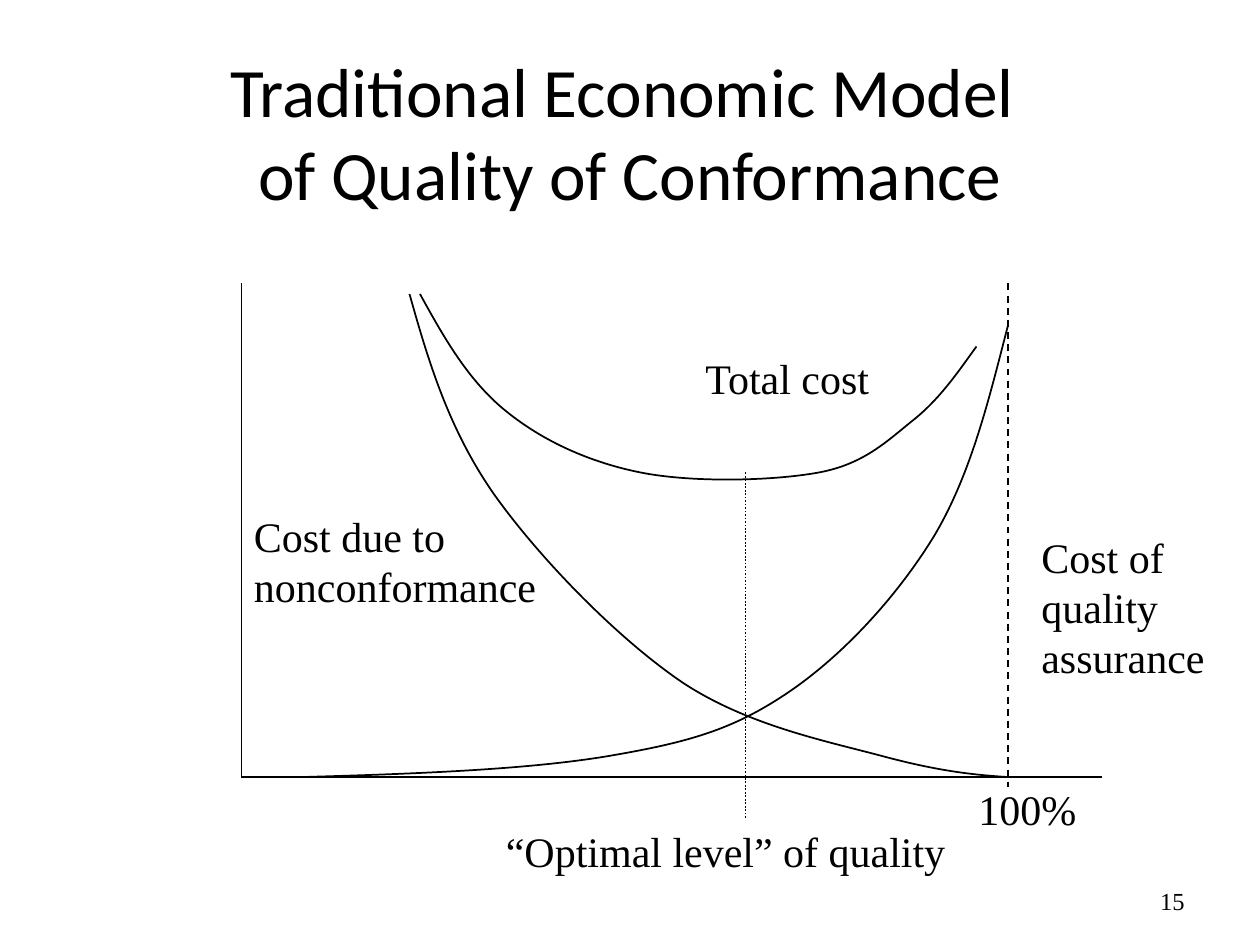
"""Build a slide on the traditional economic model of quality of conformance."""
from lxml.etree import SubElement
from pptx import Presentation
from pptx.dml.color import RGBColor
from pptx.enum.dml import MSO_LINE
from pptx.enum.shapes import MSO_CONNECTOR
from pptx.enum.text import MSO_ANCHOR, PP_ALIGN
from pptx.oxml.ns import qn
from pptx.util import Cm, Pt

GRID_CM = 25.4 / 120
INK = "000000"
SERIF = "Times New Roman"

TITLE = ("Traditional Economic Model \vof Quality of Conformance", (9, 5, 102, 15))
PAGE_NUMBER = ("15", (86, 83.4, 28, 4.8))
LABELS = [
    ("Total cost", (66, 33, 24, 6)),
    ("Cost due to nonconformance", (23, 48, 32, 10.8)),
    ("Cost of quality assurance", (98, 50, 22, 15.6)),
    ("“Optimal level” of quality", (47, 78, 47, 6)),
    ("100%", (92, 74, 14, 6)),
]

COST_AXIS = ((23, 27), (23, 74), None)
QUALITY_AXIS = ((23, 74), (105, 74), None)
OPTIMAL_LEVEL = ((71, 45), (71, 78), MSO_LINE.ROUND_DOT)
FULL_QUALITY = ((96, 27), (96, 75), MSO_LINE.DASH)

ASSURANCE_COST = [
    (29, 74),
    (39.7, 73.7), (50.3, 73.3), (58, 72),
    (65.6, 70.7), (69.8, 69.5), (75, 66),
    (80.2, 62.5), (85.4, 56.9), (89, 51),
    (92.5, 45.1), (94.2, 38), (96, 31),
]
NONCONFORMANCE_COST = [
    (39, 28),
    (40.8, 34.4), (42.7, 40.8), (47, 47),
    (51.4, 53.2), (58.8, 60.8), (65, 65),
    (71.2, 69.1), (78.8, 70.6), (84, 72),
    (89.2, 73.4), (92.6, 73.8), (96, 74),
]
TOTAL_COST = [
    (40, 28),
    (42.2, 32), (44.5, 36.1), (48, 39),
    (51.5, 41.9), (56, 44), (61, 45),
    (66, 46), (73.7, 45.8), (78, 45),
    (82.3, 44.2), (84.5, 42), (87, 40),
    (89.5, 38), (91.2, 35.5), (93, 33),
]


def color(hex_string):
    return RGBColor.from_string(hex_string)


def grid(*units):
    return [Cm(unit * GRID_CM) for unit in units]


def style_line(line):
    line.color.rgb = color(INK)
    line.width = Pt(1)


def add_text(slide, text, place, size=24, font=SERIF,
             align=PP_ALIGN.LEFT, anchor=MSO_ANCHOR.TOP):
    frame = slide.shapes.add_textbox(*grid(*place)).text_frame
    frame.word_wrap = True
    frame.vertical_anchor = anchor
    frame.text = text
    paragraph = frame.paragraphs[0]
    paragraph.alignment = align
    for run in paragraph.runs:
        run.font.name = font
        run.font.size = Pt(size)
        run.font.color.rgb = color(INK)


def add_line(slide, start, end, dash):
    connector = slide.shapes.add_connector(MSO_CONNECTOR.STRAIGHT, *grid(*start, *end))
    style_line(connector.line)
    if dash is not None:
        connector.line.dash_style = dash
    SubElement(connector.element.spPr, qn("a:effectLst"))


def add_curve(slide, points):
    start, *rest = [grid(*point) for point in points]
    builder = slide.shapes.build_freeform(*start)
    builder.add_line_segments(rest, close=False)
    curve = builder.convert_to_shape()
    curve.shadow.inherit = False
    curve.fill.background()
    style_line(curve.line)
    segments = list(curve.element.iter(qn("a:lnTo")))
    outline = segments[0].getparent()
    for first in range(0, len(segments), 3):
        bezier = SubElement(outline, qn("a:cubicBezTo"))
        for segment in segments[first:first + 3]:
            bezier.append(segment[0])
            outline.remove(segment)


def main():
    deck = Presentation()
    deck.slide_width, deck.slide_height = Cm(25.4), Cm(19.05)
    slide = deck.slides.add_slide(deck.slide_layouts[6])

    add_text(slide, *TITLE, size=39.6, font="Calibri",
             align=PP_ALIGN.CENTER, anchor=MSO_ANCHOR.MIDDLE)
    add_text(slide, *PAGE_NUMBER, size=14,
             align=PP_ALIGN.RIGHT, anchor=MSO_ANCHOR.MIDDLE)
    for line in (COST_AXIS, QUALITY_AXIS, OPTIMAL_LEVEL, FULL_QUALITY):
        add_line(slide, *line)
    for points in (ASSURANCE_COST, NONCONFORMANCE_COST, TOTAL_COST):
        add_curve(slide, points)
    for label in LABELS:
        add_text(slide, *label)

    deck.save("out.pptx")


if __name__ == "__main__":
    main()
